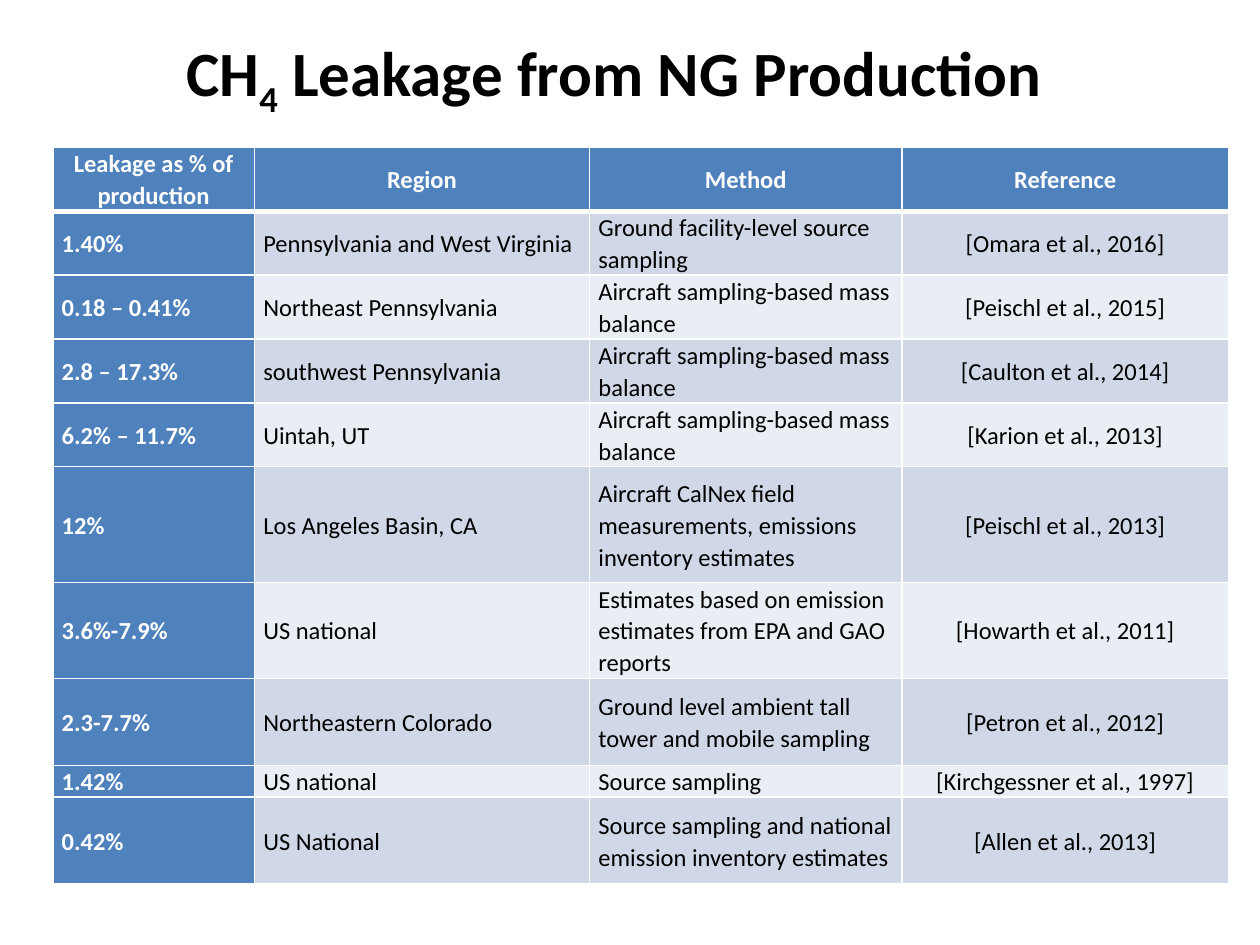
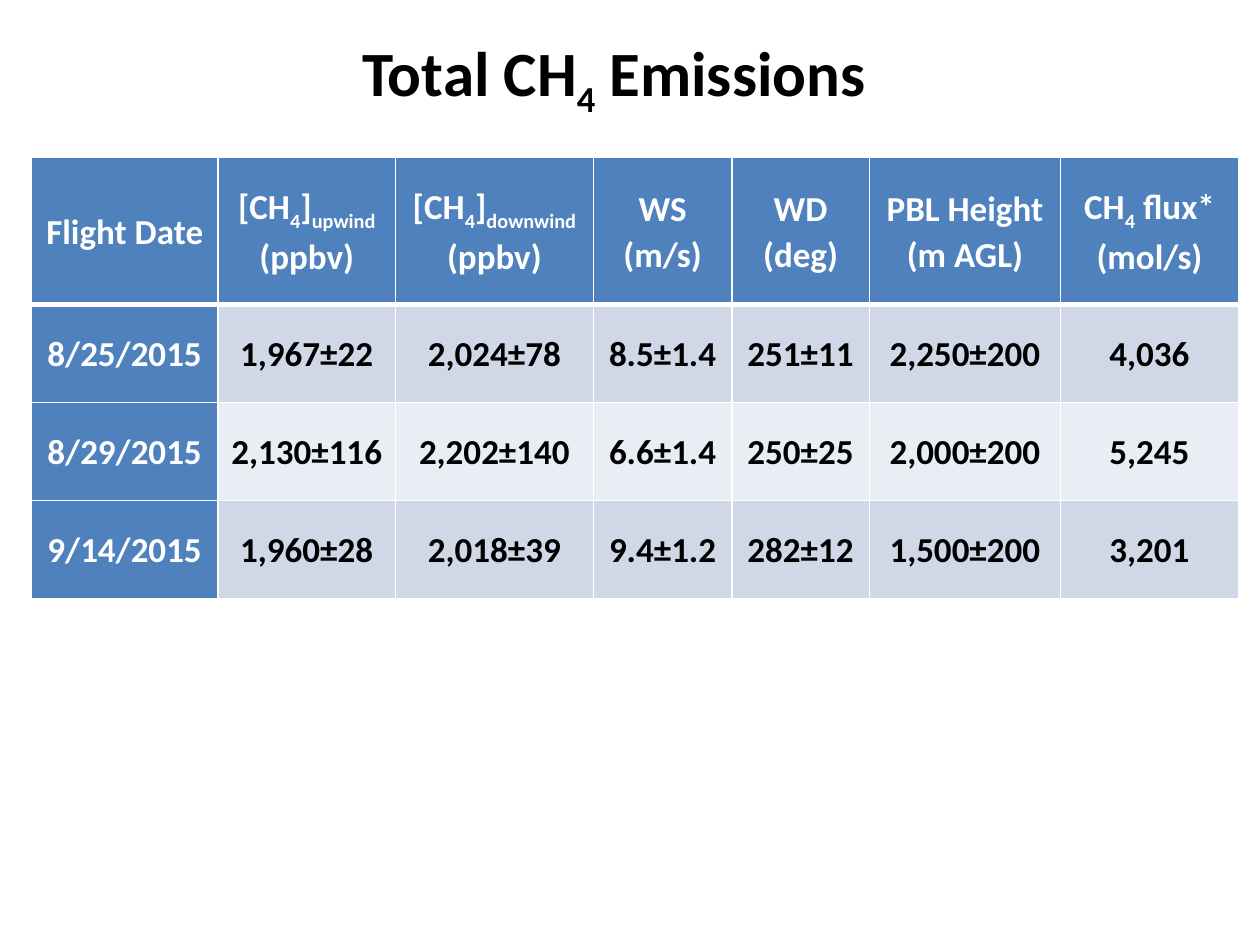
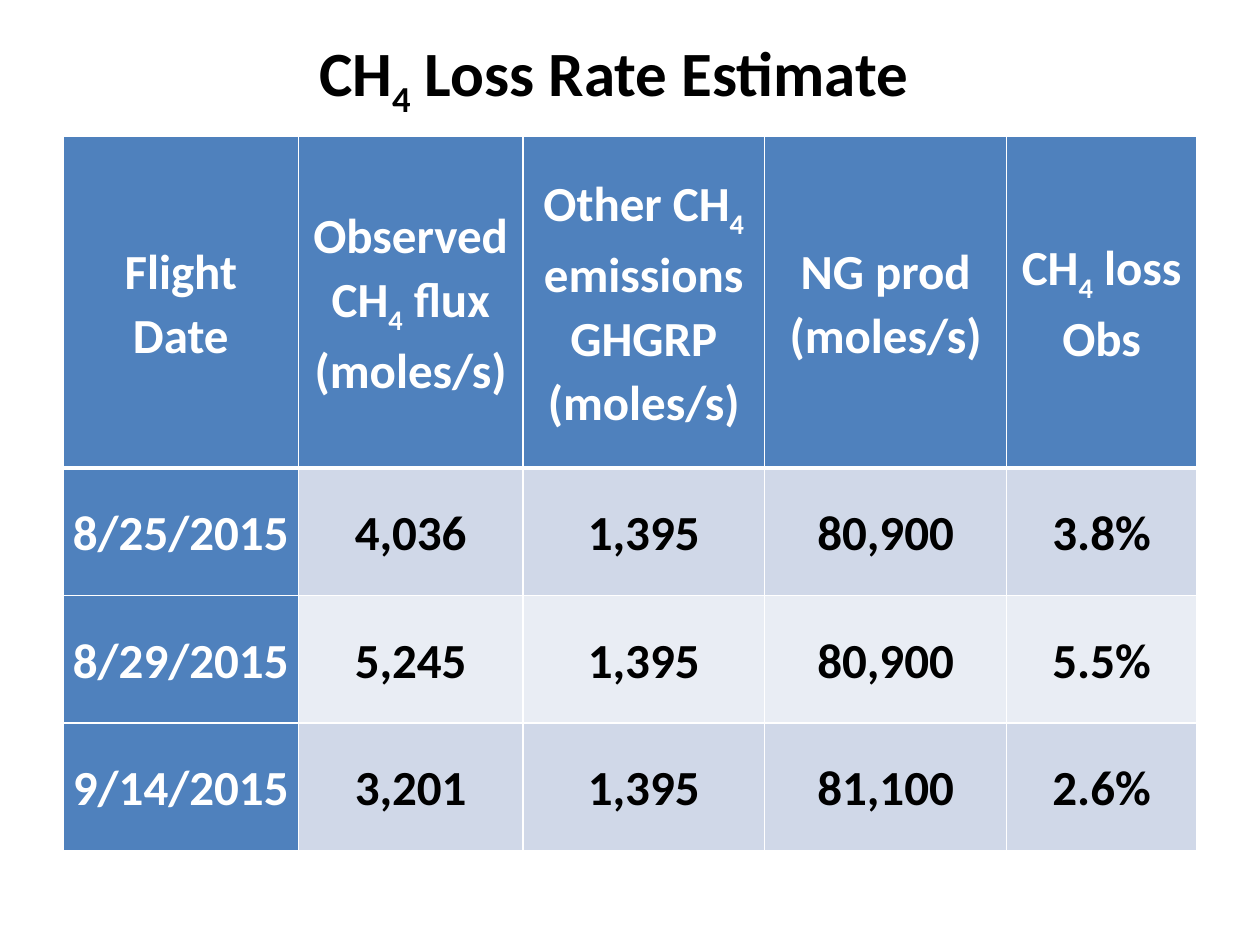
import pptx
import pptx.dml.color
import pptx.enum.text
import pptx.oxml
import pptx.oxml.ns
import pptx.util

Pt = pptx.util.Pt
MIDDLE = pptx.enum.text.MSO_ANCHOR.MIDDLE
LEFT = pptx.enum.text.PP_ALIGN.LEFT
CENTER = pptx.enum.text.PP_ALIGN.CENTER

FONT = "Calibri"
BLACK = "000000"
WHITE = "FFFFFF"
HEADER_BLUE = "4F81BD"
BANDS = ["E9EDF4", "D0D8E8"]
TITLE_BOX = (5.8, 15.8, 690, 56.2)

LEAKAGE_STUDIES = [
    ["Leakage as % of production", "Region", "Method", "Reference"],
    ["1.40%", "Pennsylvania and West Virginia",
     "Ground facility-level source sampling", "[Omara et al., 2016]"],
    ["0.18 – 0.41%", "Northeast Pennsylvania",
     "Aircraft sampling-based mass balance", "[Peischl et al., 2015]"],
    ["2.8 – 17.3%", "southwest Pennsylvania",
     "Aircraft sampling-based mass balance", "[Caulton et al., 2014]"],
    ["6.2% – 11.7%", "Uintah, UT",
     "Aircraft sampling-based mass balance", "[Karion et al., 2013]"],
    ["12%", "Los Angeles Basin, CA",
     "Aircraft CalNex field measurements, emissions inventory estimates",
     "[Peischl et al., 2013]"],
    ["3.6%-7.9%", "US national",
     "Estimates based on emission estimates from EPA and GAO reports",
     "[Howarth et al., 2011]"],
    ["2.3-7.7%", "Northeastern Colorado",
     "Ground level ambient tall tower and mobile sampling",
     "[Petron et al., 2012]"],
    ["1.42%", "US national", "Source sampling", "[Kirchgessner et al., 1997]"],
    ["0.42%", "US National",
     "Source sampling and national emission inventory estimates",
     "[Allen et al., 2013]"],
]

FLIGHT_EMISSIONS = [
    ["Flight Date", "[CH~4~]~upwind~\n(ppbv)", "[CH~4~]~downwind~\n(ppbv)",
     "WS\n(m/s)", "WD\n(deg)", "PBL Height\n(m AGL)", "CH~4~ flux*\n(mol/s)"],
    ["8/25/2015", "1,967±22", "2,024±78", "8.5±1.4", "251±11", "2,250±200", "4,036"],
    ["8/29/2015", "2,130±116", "2,202±140", "6.6±1.4", "250±25", "2,000±200", "5,245"],
    ["9/14/2015", "1,960±28", "2,018±39", "9.4±1.2", "282±12", "1,500±200", "3,201"],
]

LOSS_RATES = [
    ["Flight Date", "Observed CH~4~ flux\n(moles/s)",
     "Other CH~4~ emissions GHGRP (moles/s)", "NG prod (moles/s)",
     "CH~4~ loss\nObs"],
    ["8/25/2015", "4,036", "1,395", "80,900", "3.8%"],
    ["8/29/2015", "5,245", "1,395", "80,900", "5.5%"],
    ["9/14/2015", "3,201", "1,395", "81,100", "2.6%"],
]


def rgb(color):
    return pptx.dml.color.RGBColor.from_string(color)


def write_text(tf, text, size, color, bold=True, align=CENTER, spacing=None):
    """Write one paragraph per line; parts between tildes are subscripts."""
    for i, line in enumerate(text.split("\n")):
        p = tf.add_paragraph() if i else tf.paragraphs[0]
        p.alignment = align
        p.line_spacing = spacing
        for j, part in enumerate(line.split("~")):
            if not part:
                continue
            r = p.add_run()
            r.text = part
            r.font.name = FONT
            r.font.size = Pt(size)
            r.font.bold = bold
            r.font.color.rgb = rgb(color)
            if j % 2:
                r.font._element.set("baseline", "-25000")


def set_borders(cell, top, bottom):
    """Draw white cell borders; the sides are 1 pt wide."""
    tc_pr = cell._tc.get_or_add_tcPr()
    widths = {"lnL": 1, "lnR": 1, "lnT": top, "lnB": bottom}
    for i, (tag, width) in enumerate(widths.items()):
        tc_pr.insert(i, pptx.oxml.parse_xml(
            f'<a:{tag} {pptx.oxml.ns.nsdecls("a")} w="{Pt(width)}">'
            f'<a:solidFill><a:srgbClr val="{WHITE}"/></a:solidFill></a:{tag}>'))


def add_titled_slide(prs, title):
    slide = prs.slides.add_slide(prs.slide_layouts[5])
    sp = slide.shapes.title
    sp.left, sp.top, sp.width, sp.height = map(Pt, TITLE_BOX)
    tf = sp.text_frame
    tf.auto_size = pptx.enum.text.MSO_AUTO_SIZE.NONE
    tf.vertical_anchor = MIDDLE
    write_text(tf, title, 36, BLACK)
    return slide


def add_data_table(slide, data, left, top, widths, heights, size,
                   body_bold=True, aligns=None):
    """Add a banded table with a blue header row and first column."""
    table = slide.shapes.add_table(
        len(data), len(widths), Pt(left), Pt(top),
        Pt(sum(widths)), Pt(sum(heights))).table
    for column, width in zip(table.columns, widths):
        column.width = Pt(width)
    for row, height in zip(table.rows, heights):
        row.height = Pt(height)
    aligns = aligns or [CENTER] * len(widths)
    for i, texts in enumerate(data):
        for j, text in enumerate(texts):
            is_heading = i == 0 or j == 0
            cell = table.cell(i, j)
            cell.vertical_anchor = MIDDLE
            cell.margin_left = cell.margin_right = Pt(5.1)
            cell.margin_top = cell.margin_bottom = 0
            cell.fill.solid()
            cell.fill.fore_color.rgb = rgb(HEADER_BLUE if is_heading else BANDS[i % 2])
            set_borders(cell, 3 if i == 1 else 1, 3 if i == 0 else 1)
            write_text(cell.text_frame, text, size,
                       WHITE if is_heading else BLACK,
                       is_heading or body_bold,
                       aligns[j] if i else CENTER, 1.07)


def main():
    prs = pptx.Presentation()
    prs.slide_width, prs.slide_height = Pt(720), Pt(540)

    slide = add_titled_slide(prs, "CH~4~ Leakage from NG Production")
    add_data_table(slide, LEAKAGE_STUDIES, 30.2, 84.3,
                   [115.2, 191.5, 178.6, 186.5],
                   [32.4] * 5 + [66.2, 49.7, 49.7, 15.8, 49.7], 14,
                   body_bold=False, aligns=[LEFT, LEFT, LEFT, CENTER])

    slide = add_titled_slide(prs, "Total CH~4~ Emissions")
    add_data_table(slide, FLIGHT_EMISSIONS, 18, 90,
                   [106.6, 101.5, 113, 79.2, 78.5, 109.4, 101.5],
                   [84] + [56] * 3, 20)

    slide = add_titled_slide(prs, "CH~4~ Loss Rate Estimate")
    add_data_table(slide, LOSS_RATES, 36, 78,
                   [134.6, 128.2, 138.2, 138.2, 108.7],
                   [189.4] + [72.9] * 3, 28)

    prs.save("out.pptx")


if __name__ == "__main__":
    main()
